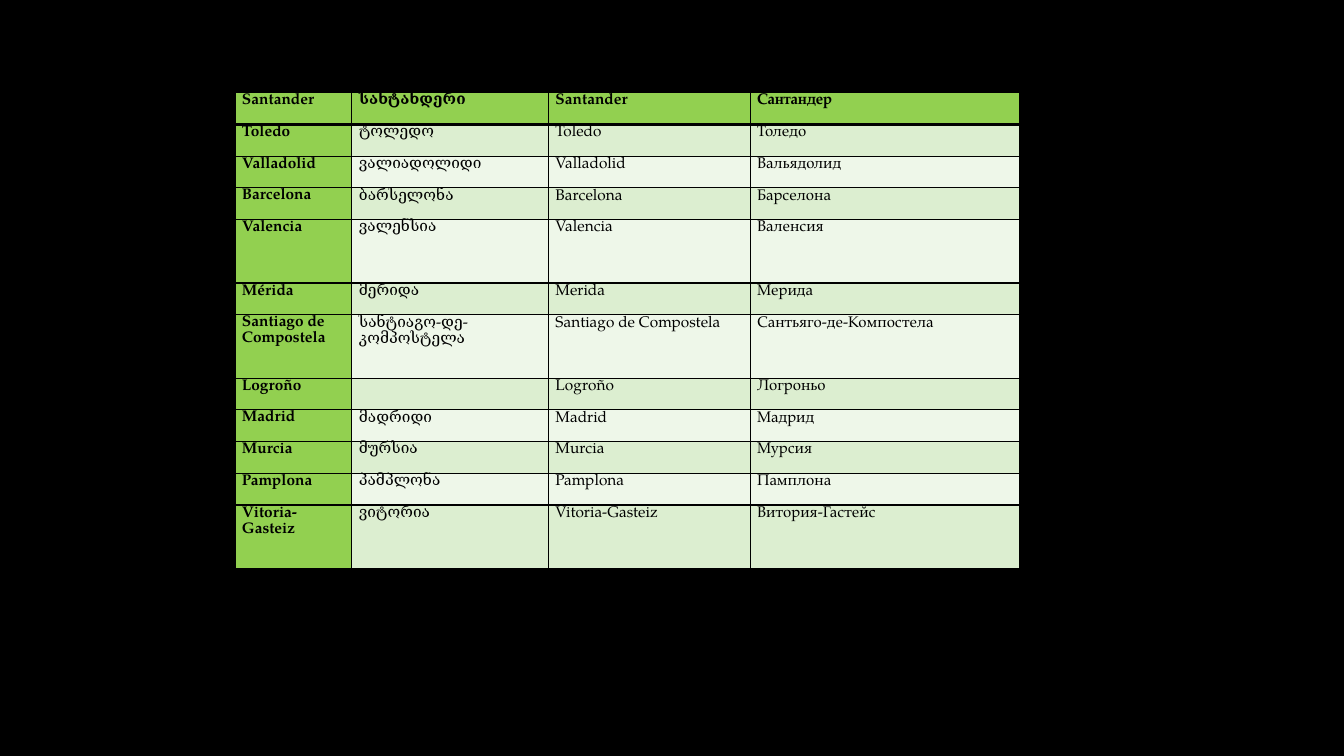
from dataclasses import dataclass

from lxml.etree import SubElement
from pptx import Presentation
from pptx.dml.color import RGBColor
from pptx.oxml.ns import qn
from pptx.util import Inches, Pt

CITIES = [
    ("Santander", "სანტანდერი", "Santander", "Сантандер"),
    ("Toledo", "ტოლედო", "Toledo", "Толедо"),
    ("Valladolid", "ვალიადოლიდი", "Valladolid", "Вальядолид"),
    ("Barcelona", "ბარსელონა", "Barcelona", "Барселона"),
    ("Valencia", "ვალენსია", "Valencia", "Валенсия"),
    ("Mérida", "მერიდა", "Merida", "Мерида"),
    ("Santiago de Compostela", "სანტიაგო-დე-კომპოსტელა", "Santiago de Compostela", "Сантьяго-де-Компостела"),
    ("Logroño", "", "Logroño", "Логроньо"),
    ("Madrid", "მადრიდი", "Madrid", "Мадрид"),
    ("Murcia", "მურსია", "Murcia", "Мурсия"),
    ("Pamplona", "პამპლონა", "Pamplona", "Памплона"),
    ("Vitoria-Gasteiz", "ვიტორია", "Vitoria-Gasteiz", "Витория-Гастейс"),
]
DOUBLE_HEIGHT_CITIES = {"Valencia", "Santiago de Compostela", "Vitoria-Gasteiz"}

SLIDE_WIDTH, SLIDE_HEIGHT = Inches(13.33), Inches(7.5)
TABLE_LEFT, TABLE_TOP = Inches(2.33), Inches(0.92)
TABLE_HEIGHT = Inches(4.72)
COLUMN_WIDTHS = [Inches(width) for width in (1.16, 1.95, 2, 2.67)]


@dataclass(frozen=True)
class Theme:
    background: str = "000000"
    ink: str = "000000"
    accent: str = "92D050"
    bands: tuple = ("EEF7E9", "DCEED0")
    font: str = "TeX Gyre Pagella"
    text_size: int = 11
    line_spacing: float = 1.07
    rule: int = 1
    header_rule: int = 3


THEME = Theme()
CELL_FORMAT = {
    "margin_left": Inches(0.07),
    "margin_right": Inches(0.07),
    "margin_top": 0,
    "margin_bottom": 0,
}


def set_attributes(target, values):
    for name, value in values.items():
        setattr(target, name, value)


def paint(fill, color):
    fill.solid()
    fill.fore_color.rgb = RGBColor.from_string(color)


def add_borders(cell, row):
    properties = cell._tc.get_or_add_tcPr()
    widths = {
        "a:lnL": THEME.rule,
        "a:lnR": THEME.rule,
        "a:lnT": THEME.header_rule if row == 1 else THEME.rule,
        "a:lnB": THEME.header_rule if row == 0 else THEME.rule,
    }
    for side, width in widths.items():
        line = SubElement(properties, qn(side), w=str(Pt(width)))
        solid_fill = SubElement(line, qn("a:solidFill"))
        SubElement(solid_fill, qn("a:srgbClr"), val=THEME.ink)


def write_text(cell, text, bold):
    paragraph = cell.text_frame.paragraphs[0]
    paragraph.line_spacing = THEME.line_spacing
    run = paragraph.add_run()
    run.text = text
    set_attributes(run.font, {"name": THEME.font, "size": Pt(THEME.text_size), "bold": bold})
    run.font.color.rgb = RGBColor.from_string(THEME.ink)


def add_city_table(slide):
    row_units = [2 if city[0] in DOUBLE_HEIGHT_CITIES else 1 for city in CITIES]
    unit_height = TABLE_HEIGHT // sum(row_units)
    table = slide.shapes.add_table(
        len(CITIES), len(COLUMN_WIDTHS), TABLE_LEFT, TABLE_TOP, sum(COLUMN_WIDTHS), TABLE_HEIGHT
    ).table
    for column, width in zip(table.columns, COLUMN_WIDTHS):
        column.width = width
    for row, (city, units) in enumerate(zip(CITIES, row_units)):
        table.rows[row].height = unit_height * units
        for column, text in enumerate(city):
            cell = table.cell(row, column)
            is_heading = row == 0 or column == 0
            set_attributes(cell, CELL_FORMAT)
            add_borders(cell, row)
            paint(cell.fill, THEME.accent if is_heading else THEME.bands[row % 2])
            if text:
                write_text(cell, text, is_heading)


def main():
    presentation = Presentation()
    set_attributes(presentation, {"slide_width": SLIDE_WIDTH, "slide_height": SLIDE_HEIGHT})
    slide = presentation.slides.add_slide(presentation.slide_layouts[6])
    paint(slide.background.fill, THEME.background)
    add_city_table(slide)
    presentation.save("out.pptx")


if __name__ == "__main__":
    main()
